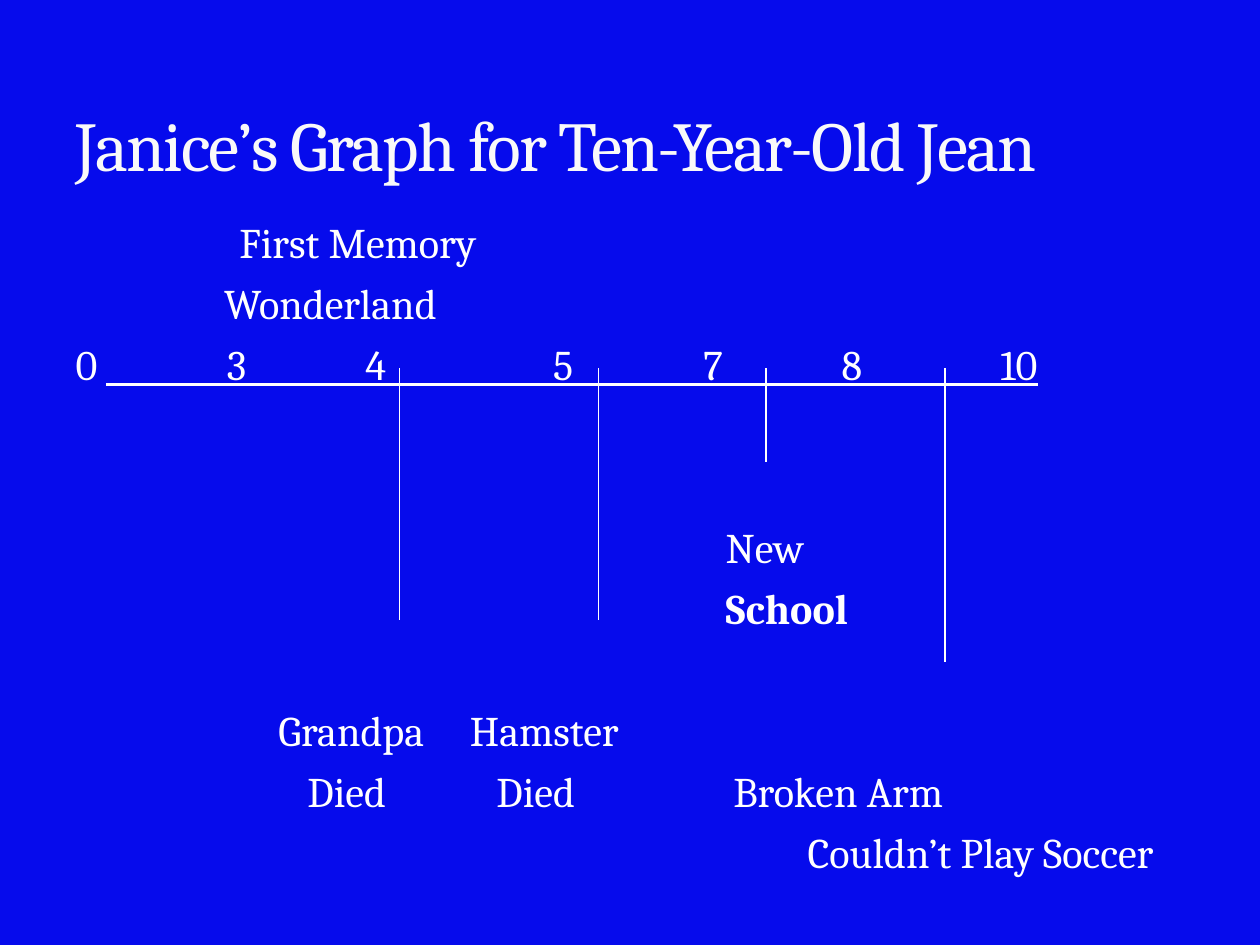
from lxml import etree
from pptx import Presentation
from pptx.dml.color import RGBColor
from pptx.enum.shapes import MSO_CONNECTOR
from pptx.enum.text import MSO_ANCHOR
from pptx.oxml.ns import qn
from pptx.util import Inches, Pt

STRAIGHT = MSO_CONNECTOR.STRAIGHT
BOTTOM = MSO_ANCHOR.BOTTOM
FIRST_ROW, ROW_STEP = 1.72, 0.484


def rgb(value):
    return RGBColor.from_string(value)


def add_text(text, left, top, width, height, color, **formats):
    tf = s.shapes.add_textbox(Inches(left), Inches(top), Inches(width), Inches(height)).text_frame
    tf.margin_left = tf.margin_right = tf.margin_top = tf.margin_bottom = 0
    tf.word_wrap = False
    r = tf.paragraphs[0].add_run()
    r.text = text
    r.font.color.rgb = rgb(color)
    for name, value in {"name": "Cambria", **formats}.items():
        setattr(r.font, name, value)
    return tf, r


prs = Presentation()
prs.slide_width, prs.slide_height = Inches(10), Inches(7.5)
s = prs.slides.add_slide(prs.slide_layouts[6])
s.background.fill.solid()
s.background.fill.fore_color.rgb = rgb("060BEC")

tf, r = add_text("Janice’s Graph for Ten-Year-Old Jean", 0.6, 0.47, 8.8, 1, "F9F9F9", size=Pt(40))
tf.vertical_anchor = BOTTOM
r.font._element.set("spc", "-100")

rows = {
    0: [("First Memory", 1.9)],
    1: [("Wonderland", 1.78)],
    2: [("0", 0.6), ("3", 1.8), ("4", 2.9), ("5", 4.39), ("7", 5.58), ("8", 6.68), ("10", 7.94)],
    5: [("New", 5.76)],
    6: [("School", 5.76)],
    8: [("Grandpa", 2.21), ("Hamster", 3.73)],
    9: [("Died", 2.44), ("Died", 3.94), ("Broken Arm", 5.82)],
    10: [("Couldn’t Play Soccer", 6.41)],
}
for row, labels in rows.items():
    for text, left in labels:
        add_text(text, left, FIRST_ROW + row * ROW_STEP, 0.15 * len(text) + 0.2, 0.4,
                 "FFFFFF", size=Pt(24.1), bold=text == "School")

timeline = (0.84, 3.05, 8.24, 3.05, 1.75)
events = [(x, 2.92, x, bottom, 0.75) for x, bottom in [(3.17, 4.92), (4.75, 4.92), (6.08, 3.67), (7.5, 5.25)]]
for x1, y1, x2, y2, width in [timeline, *events]:
    line = s.shapes.add_connector(STRAIGHT, Inches(x1), Inches(y1), Inches(x2), Inches(y2))
    line.line.color.rgb = rgb("FFFFFF")
    line.line.width = Pt(width)
    etree.SubElement(line._element.spPr, qn("a:effectLst"))

prs.save("out.pptx")
